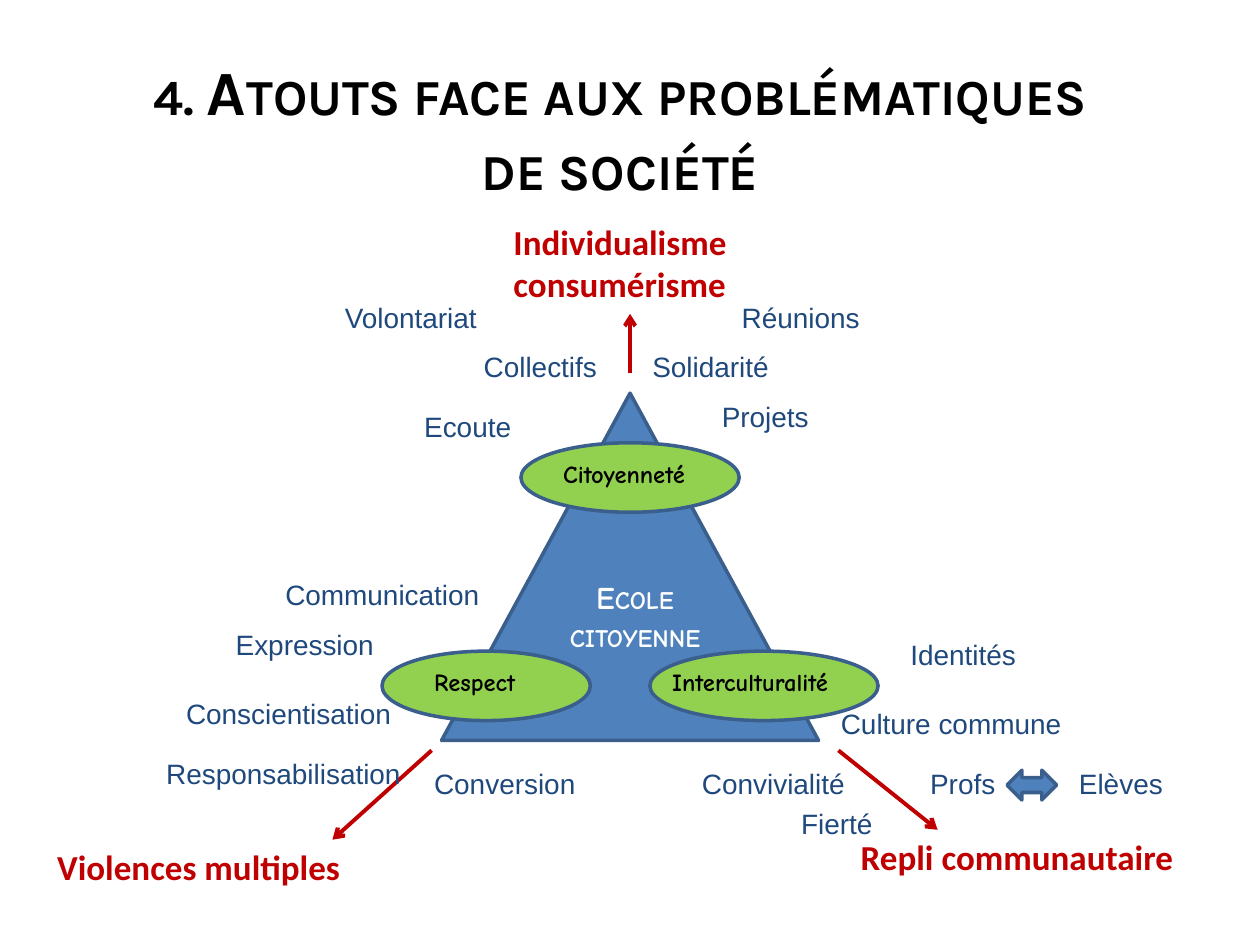
from dataclasses import dataclass
from pptx import Presentation
from pptx.dml.color import RGBColor
from pptx.enum.shapes import MSO_CONNECTOR, MSO_SHAPE
from pptx.enum.text import MSO_ANCHOR, MSO_AUTO_SIZE, PP_ALIGN
from pptx.oxml.ns import qn
from pptx.util import Inches, Pt
from lxml import etree

LINE = MSO_CONNECTOR.STRAIGHT
CONE, OVAL, SWAP = (MSO_SHAPE.ISOSCELES_TRIANGLE, MSO_SHAPE.OVAL,
                    MSO_SHAPE.LEFT_RIGHT_ARROW)
LEFT, MID = PP_ALIGN.LEFT, PP_ALIGN.CENTER
TOP, FIXED = MSO_ANCHOR.TOP, MSO_AUTO_SIZE.NONE

STEP = 10 / 127          # one grid cell, in inches
EDGE_X, EDGE_Y = 0.04, 0.05


def style(name, size, color, bold=True):
    return {"name": name, "size": Pt(size), "bold": bold,
            "color": RGBColor.from_string(color)}


@dataclass(frozen=True)
class Theme:
    blue = RGBColor.from_string("4F81BD")
    green = RGBColor.from_string("92D050")
    edge = RGBColor.from_string("3A5F8C")
    red = RGBColor.from_string("C00000")
    title = style("Karla", 36, "000000")
    core = style("Comic Neue", 18, "FFFFFF")
    value = style("Comic Neue", 14, "000000")
    issue = style("Calibri", 20, "C00000")
    word = style("Arial", 16, "1F497D", False)


THEME = Theme()

# Text, column, row, columns wide
WORDS = [
    ("Conscientisation", 17, 69, 25),
    ("Responsabilisation", 15, 75, 27),
    ("Expression", 22, 62, 17),
    ("Communication", 27, 57, 25),
    ("Conversion", 42, 76, 18),
    ("Fierté", 79, 80, 11),
    ("Culture commune", 83, 70, 26),
    ("Convivialité", 69, 76, 17),
    ("Profs", 92, 76, 11),
    ("Elèves", 107, 76, 11),
    ("Solidarité", 64, 34, 15),
    ("Collectifs", 47, 34, 15),
    ("Projets", 71, 39, 13),
    ("Ecoute", 41, 40, 15),
    ("Identités", 90, 63, 15),
    ("Réunions", 73, 29, 15),
    ("Volontariat", 33, 29, 18),
]
# Text box, its height in rows, then arrow start and end
ISSUES = [
    (("Individualisme consumérisme", 50, 21, 27), 10, (63, 37), (63, 31)),
    (("Repli communautaire", 85, 83, 38), 5.5, (84, 75), (94, 83)),
    (("Violences multiples", 4, 84, 33), 5.5, (43, 75), (33, 84)),
]
# Oval column, row, width, then its text box
VALUES = [
    ((52, 44, 22), ("Citoyenneté", 55, 45, 17)),
    ((38, 65, 21), ("Respect", 42, 66, 12)),
    ((65, 65, 23), ("Interculturalité", 66, 66, 23)),
]


def point(col, row):
    return Inches(EDGE_X + col * STEP), Inches(EDGE_Y + row * STEP)


def area(col, row, wide, high):
    return (*point(col, row), Inches(wide * STEP), Inches(high * STEP))


def write(frame, lines, look, align=LEFT, small=False):
    """Fill a text frame, one paragraph a line; small sets small capitals."""
    for key, val in {"word_wrap": True, "auto_size": FIXED,
                     "vertical_anchor": TOP}.items():
        setattr(frame, key, val)
    frame.text = "\n".join(lines)
    for para in frame.paragraphs:
        para.alignment = align
        for run in para.runs:
            for key, val in look.items():
                if key == "color":
                    run.font.color.rgb = val
                else:
                    setattr(run.font, key, val)
            if small:
                run.font._element.set("cap", "small")


def label(shapes, text, col, row, wide, look, high=4.7, **more):
    box = shapes.add_textbox(*area(col, row, wide, high))
    write(box.text_frame, text.split("\n"), look, **more)


def solid(shapes, kind, box, fill):
    shape = shapes.add_shape(kind, *area(*box))
    shape.shadow.inherit = False
    shape.fill.solid()
    shape.fill.fore_color.rgb = fill
    shape.line.color.rgb = THEME.edge
    shape.line.width = Pt(2)


def arrow(shapes, start, end):
    link = shapes.add_connector(LINE, *point(*start), *point(*end))
    link.line.color.rgb = THEME.red
    link.line.width = Pt(2.25)
    etree.SubElement(link.line._get_or_add_ln(), qn("a:tailEnd"), type="arrow")
    etree.SubElement(link._element.spPr, qn("a:effectLst"))


def head(slide):
    title = slide.shapes.title
    spot = dict(zip(("left", "top", "width", "height"), area(7, 4, 110, 16.6)))
    for key, val in spot.items():
        setattr(title, key, val)
    write(title.text_frame, ["4. Atouts face aux problématiques", "de société"],
          THEME.title, MID, True)


def main():
    deck = Presentation()
    deck.slide_width, deck.slide_height = Inches(10), Inches(7.5)
    slide = deck.slides.add_slide(deck.slide_layouts[5])
    shapes = slide.shapes
    head(slide)

    core = shapes.add_group_shape().shapes
    solid(core, CONE, (44, 39, 38, 35), THEME.blue)
    label(core, "Ecole\ncitoyenne", 54, 57, 19, THEME.core, 9,
          align=MID, small=True)

    for text, high, start, end in ISSUES:
        label(shapes, *text, THEME.issue, high)
        arrow(shapes, start, end)
    for oval, text in VALUES:
        group = shapes.add_group_shape().shapes
        solid(group, OVAL, (*oval, 7), THEME.green)
        label(group, *text, THEME.value, 4.3)
    for text in WORDS:
        label(shapes, *text, THEME.word)
    solid(shapes, SWAP, (101, 77, 5, 3), THEME.blue)
    deck.save("out.pptx")


if __name__ == "__main__":
    main()
